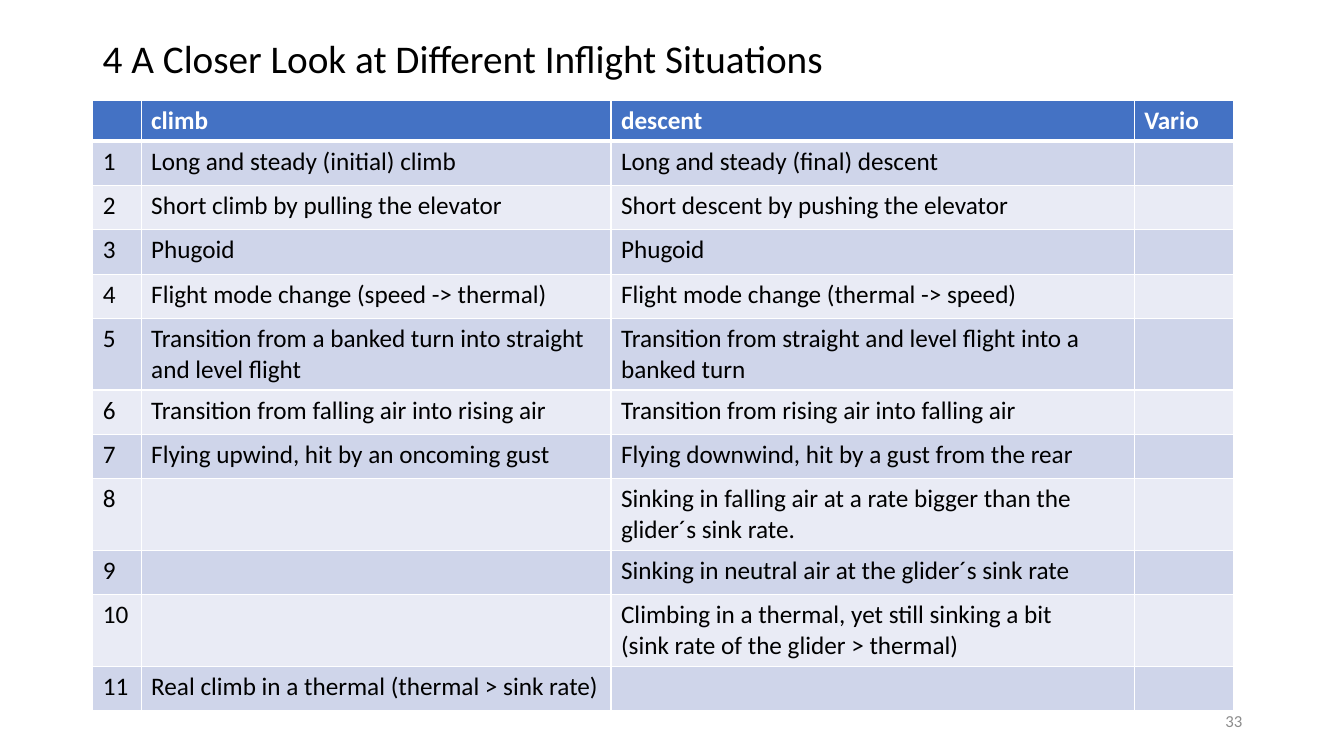
from lxml import etree
from pptx import Presentation
from pptx import util as u
from pptx.dml.color import RGBColor
from pptx.enum import text
from pptx.oxml.ns import qn

COLORS = {
    "head": "4472C4",
    "odd": "CFD5EA",
    "even": "E9EBF5",
    "white": "FFFFFF",
    "black": "000000",
    "gray": "8C8C8C",
}
WIDTHS = [0.48, 4.66, 5.19, 0.99]
HEAD = ["", "climb", "descent", "Vario"]
CASES = [
    ("Long and steady (initial) climb", "Long and steady (final) descent"),
    ("Short climb by pulling the elevator", "Short descent by pushing the elevator"),
    ("Phugoid", "Phugoid"),
    ("Flight mode change (speed -> thermal)", "Flight mode change (thermal -> speed)"),
    ("Transition from a banked turn into straight and level flight",
     "Transition from straight and level flight into a banked turn"),
    ("Transition from falling air into rising air",
     "Transition from rising air into falling air"),
    ("Flying upwind, hit by an oncoming gust",
     "Flying downwind, hit by a gust from the rear"),
    ("", "Sinking in falling air at a rate bigger than the glider´s sink rate."),
    ("", "Sinking in neutral air at the glider´s sink rate"),
    ("", "Climbing in a thermal, yet still sinking a bit\n"
         "(sink rate of the glider > thermal)"),
    ("Real climb in a thermal (thermal > sink rate)", ""),
]
TALL = {5, 8, 10}  # rows with two lines of text


class Deck:
    font = "Calibri"

    def __init__(self):
        self.prs = Presentation()
        self.prs.slide_width = u.Inches(13.33)
        self.prs.slide_height = u.Inches(7.5)
        self.slide = self.prs.slides.add_slide(self.prs.slide_layouts[6])

    def fill_text(self, frame, words, size, color, bold=False, align=None, gap=None):
        frame.text = words
        for para in frame.paragraphs:
            para.font.name = self.font
            para.font.size = u.Pt(size)
            para.font.bold = bold
            para.font.color.rgb = RGBColor.from_string(COLORS[color])
            para.alignment = align
            para.line_spacing = gap

    def label(self, box, words, size, color, **style):
        frame = self.slide.shapes.add_textbox(*map(u.Inches, box)).text_frame
        frame.word_wrap = True
        frame.vertical_anchor = text.MSO_ANCHOR.MIDDLE
        self.fill_text(frame, words, size, color, **style)

    def edge(self, cell, side, width):
        line = etree.SubElement(cell._tc.get_or_add_tcPr(), qn("a:" + side),
                                w=str(u.Pt(width)))
        fill = etree.SubElement(line, qn("a:solidFill"))
        etree.SubElement(fill, qn("a:srgbClr"), val=COLORS["white"])

    def table(self, box, widths, heights, rows):
        grid = self.slide.shapes.add_table(
            len(rows), len(widths), *map(u.Inches, box)).table
        for col, width in zip(grid.columns, widths):
            col.width = u.Inches(width)
        for r, (row, height) in enumerate(zip(rows, heights)):
            grid.rows[r].height = u.Inches(height)
            shade = "head" if r == 0 else "odd" if r % 2 else "even"
            for c, words in enumerate(row):
                cell = grid.cell(r, c)
                self.fill_text(cell.text_frame, words, 18,
                               "black" if r else "white", bold=r == 0)
                for side in ("lnL", "lnR", "lnT", "lnB"):
                    thick = (r, side) in ((0, "lnB"), (1, "lnT"))
                    self.edge(cell, side, 3 if thick else 1)
                cell.fill.solid()
                cell.fill.fore_color.rgb = RGBColor.from_string(COLORS[shade])


def main():
    deck = Deck()

    # Title
    deck.label((0.92, 0.21, 11.5, 0.79),
               "4 A Closer Look at Different Inflight Situations",
               28, "black", gap=0.9)

    # Table of flight situations
    rows = [HEAD] + [(str(n), up, down, "")
                     for n, (up, down) in enumerate(CASES, 1)]
    heights = [0.39] + [0.71 if n in TALL else 0.44
                        for n in range(1, len(rows))]
    deck.table((0.92, 1, sum(WIDTHS), sum(heights)), WIDTHS, heights, rows)

    # Page number
    deck.label((9.42, 6.95, 3, 0.4), "33", 12, "gray",
               align=text.PP_ALIGN.RIGHT)

    deck.prs.save("out.pptx")


if __name__ == "__main__":
    main()
